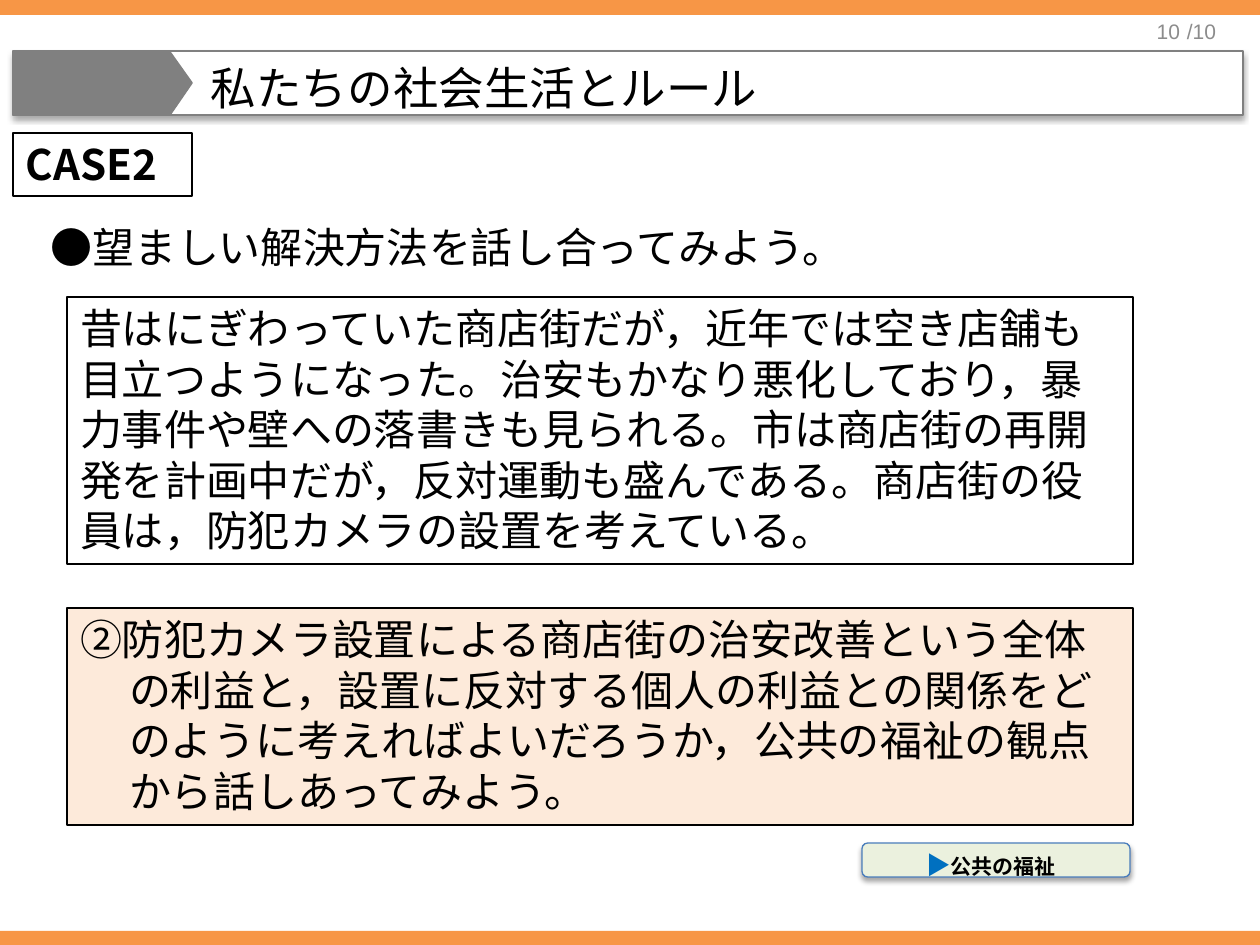
"""Build the slide on the rules of social life, case 2."""
from lxml.etree import SubElement
from pptx import Presentation
from pptx.dml.color import RGBColor
from pptx.enum.shapes import MSO_SHAPE as SHAPE
from pptx.enum.text import MSO_ANCHOR as ANCHOR, MSO_AUTO_SIZE as AUTO, PP_ALIGN as ALIGN
from pptx.oxml.ns import qn
from pptx.util import Pt

EMU_PER_PX = 914400 / 126
ARIAL, NOTO = "Arial", "Noto Sans CJK JP"
BLACK = RGBColor(0x00, 0x00, 0x00)
WHITE = RGBColor(0xFF, 0xFF, 0xFF)
GRAY = RGBColor(0x80, 0x80, 0x80)
PAGE_GRAY = RGBColor(0x8C, 0x8C, 0x8C)
ORANGE = RGBColor(0xF7, 0x96, 0x46)
PEACH = RGBColor(0xFD, 0xEA, 0xDA)
PALE_GREEN = RGBColor(0xEB, 0xF1, 0xDE)
BLUE_LINE = RGBColor(0x4B, 0x7E, 0xBC)
BLUE = RGBColor(0x00, 0x70, 0xC0)


def px(length):
    return round(length * EMU_PER_PX)


def paint(shape, fill=None, line=None, width=0.75):
    if fill is None:
        shape.fill.background()
    else:
        shape.fill.solid()
        shape.fill.fore_color.rgb = fill
    if line is None:
        shape.line.fill.background()
    else:
        shape.line.color.rgb = line
        shape.line.width = Pt(width)


def add_shadow(shape):
    shape.shadow.inherit = False
    effects = shape._element.spPr.find(qn("a:effectLst"))
    shadow = SubElement(effects, qn("a:outerShdw"), blurRad=str(Pt(3.1)),
                        dist=str(Pt(1.8)), dir="5400000", rotWithShape="0")
    color = SubElement(shadow, qn("a:srgbClr"), val="000000")
    SubElement(color, qn("a:alpha"), val="35000")


def add_run(paragraph, text, size, color=BLACK, bold=False, font=NOTO):
    run = paragraph.add_run()
    run.text = text
    run.font.size, run.font.bold, run.font.name = Pt(size), bold, font
    run.font.color.rgb = color
    SubElement(run._r.get_or_add_rPr(), qn("a:ea"), typeface=font)


def lay_out(shape, margins=(13, 6, 13, 6), anchor=ANCHOR.TOP, align=ALIGN.LEFT,
            left=0, first=0, spacing=None):
    frame = shape.text_frame
    frame.word_wrap, frame.auto_size = True, AUTO.NONE
    frame.vertical_anchor = anchor
    (frame.margin_left, frame.margin_top,
     frame.margin_right, frame.margin_bottom) = map(px, margins)
    paragraph = frame.paragraphs[0]
    paragraph.alignment = align
    if spacing:
        paragraph.line_spacing = Pt(spacing)
    indents = paragraph._p.get_or_add_pPr()
    indents.set("marL", str(px(left)))
    indents.set("indent", str(px(first)))
    return paragraph


def add_bar(slide, top):
    bar = slide.shapes.add_shape(SHAPE.RECTANGLE, 0, px(top), px(1260), px(15))
    bar.shadow.inherit = False
    paint(bar, ORANGE)


def add_page_text(slide, text, right):
    box = slide.shapes.add_textbox(px(right - 294), px(15), px(294), px(33))
    paragraph = lay_out(box, anchor=ANCHOR.MIDDLE, align=ALIGN.RIGHT)
    add_run(paragraph, text, 12, PAGE_GRAY, font=ARIAL)


def add_title(slide, text):
    title = slide.shapes.title
    title.left, title.top, title.width, title.height = map(px, (13, 51, 1230, 64))
    paint(title, WHITE, GRAY)
    add_shadow(title)
    paragraph = lay_out(title, (13, 15, 13, 6), ANCHOR.MIDDLE, left=185, spacing=31.2)
    add_run(paragraph, text, 26)


def add_title_tab(slide):
    builder = slide.shapes.build_freeform(170, 52, scale=EMU_PER_PX)
    builder.add_line_segments([(192, 83), (170, 115), (13, 115), (13, 52)], close=True)
    tab = builder.convert_to_shape()
    tab.shadow.inherit = False
    paint(tab, GRAY, GRAY, 1)


def add_passage(slide, text, area, fill=None, line=BLACK, hanging=0, bold=False):
    box = slide.shapes.add_textbox(*map(px, area))
    paint(box, fill, line)
    paragraph = lay_out(box, left=hanging, first=-hanging, spacing=28.8)
    add_run(paragraph, text, 24, bold=bold)


def add_term_button(slide, term):
    button = slide.shapes.add_shape(SHAPE.ROUNDED_RECTANGLE,
                                    *map(px, (862, 843, 268, 34)))
    paint(button, PALE_GREEN, BLUE_LINE)
    add_shadow(button)
    paragraph = lay_out(button, (0, 15, 10, 6), ANCHOR.MIDDLE, ALIGN.CENTER, spacing=16.8)
    add_run(paragraph, "▶", 14, BLUE, True)
    add_run(paragraph, term, 12, bold=True)


def main():
    deck = Presentation()
    deck.slide_width, deck.slide_height = px(1260), px(945)
    slide = deck.slides.add_slide(deck.slide_layouts[5])
    add_page_text(slide, "10", 1193)
    add_page_text(slide, "/10", 1229)
    for top in (0, 931):
        add_bar(slide, top)
    add_title(slide, "私たちの社会生活とルール")
    add_title_tab(slide)
    add_passage(slide, "CASE2", (13, 133, 179, 63), hanging=37, bold=True)
    add_passage(slide, "●望ましい解決方法を話し合ってみよう。", (38, 216, 1066, 63), line=None)
    add_passage(slide, "昔はにぎわっていた商店街だが，近年では空き店舗も目立つようになった。"
                "治安もかなり悪化しており，暴力事件や壁への落書きも見られる。"
                "市は商店街の再開発を計画中だが，反対運動も盛んである。"
                "商店街の役員は，防犯カメラの設置を考えている。", (67, 297, 1066, 267))
    add_passage(slide, "②防犯カメラ設置による商店街の治安改善という全体の利益と，"
                "設置に反対する個人の利益との関係をどのように考えればよいだろうか，"
                "公共の福祉の観点から話しあってみよう。", (67, 608, 1066, 217),
                fill=PEACH, hanging=49)
    add_term_button(slide, "公共の福祉")
    deck.save("out.pptx")


if __name__ == "__main__":
    main()
